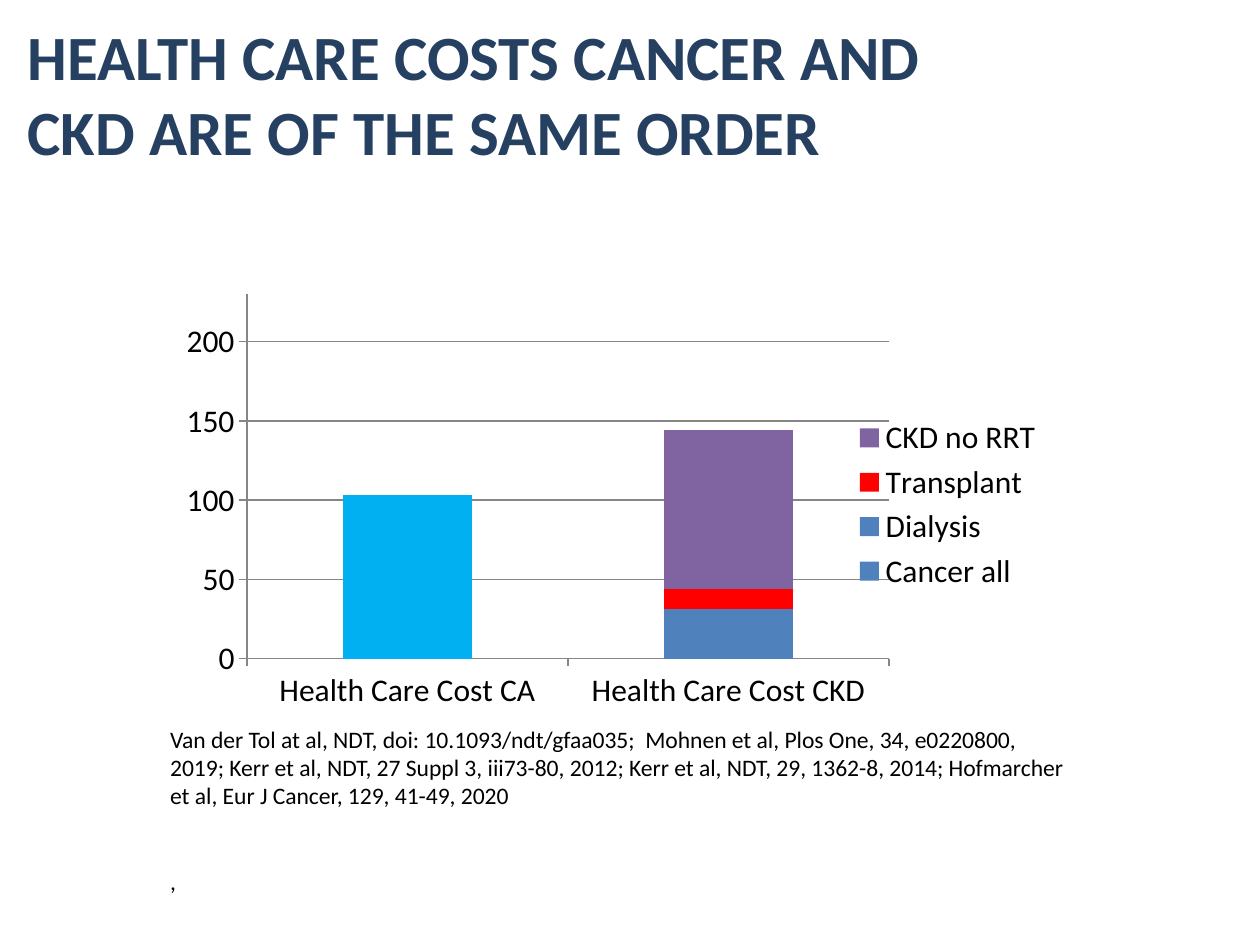
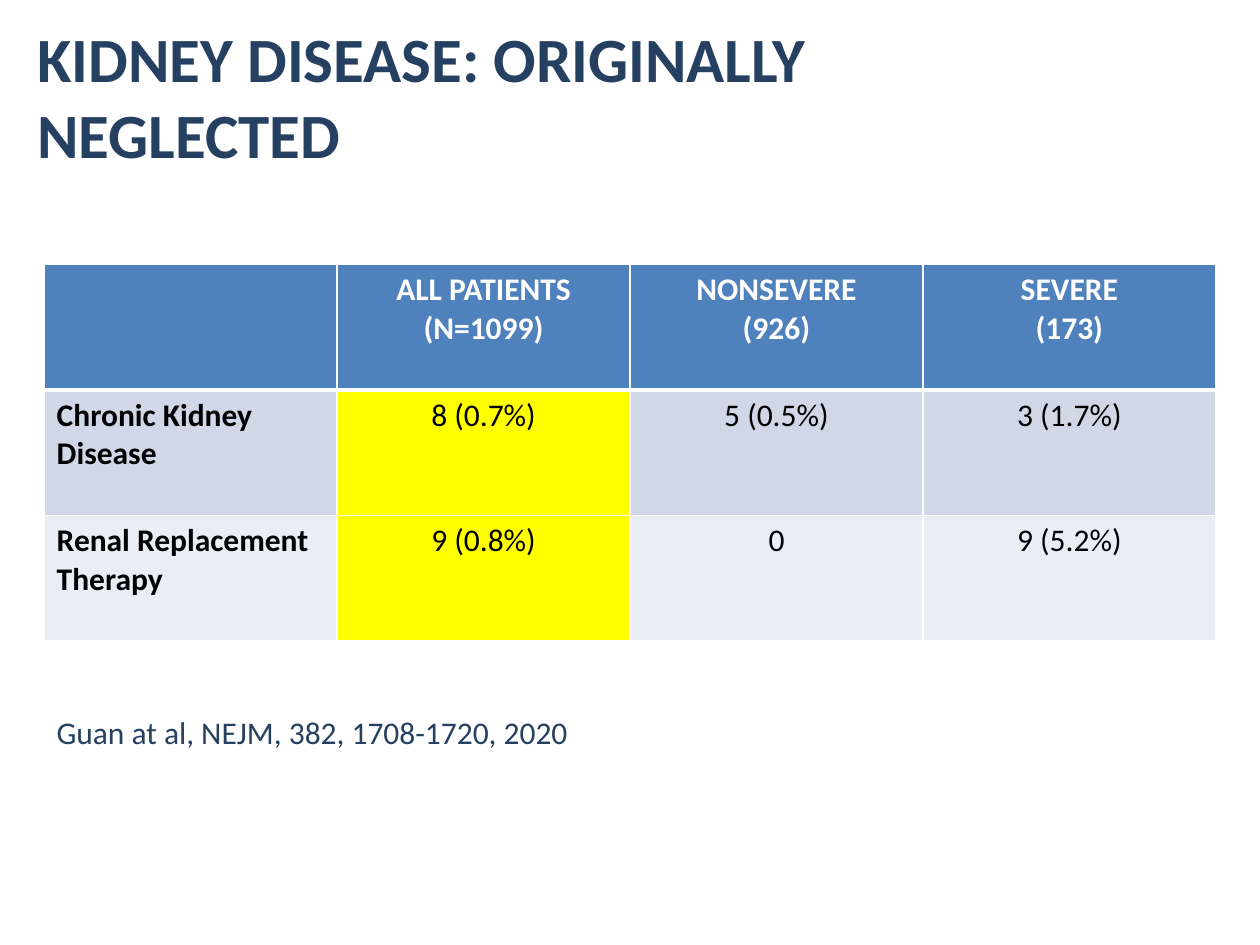
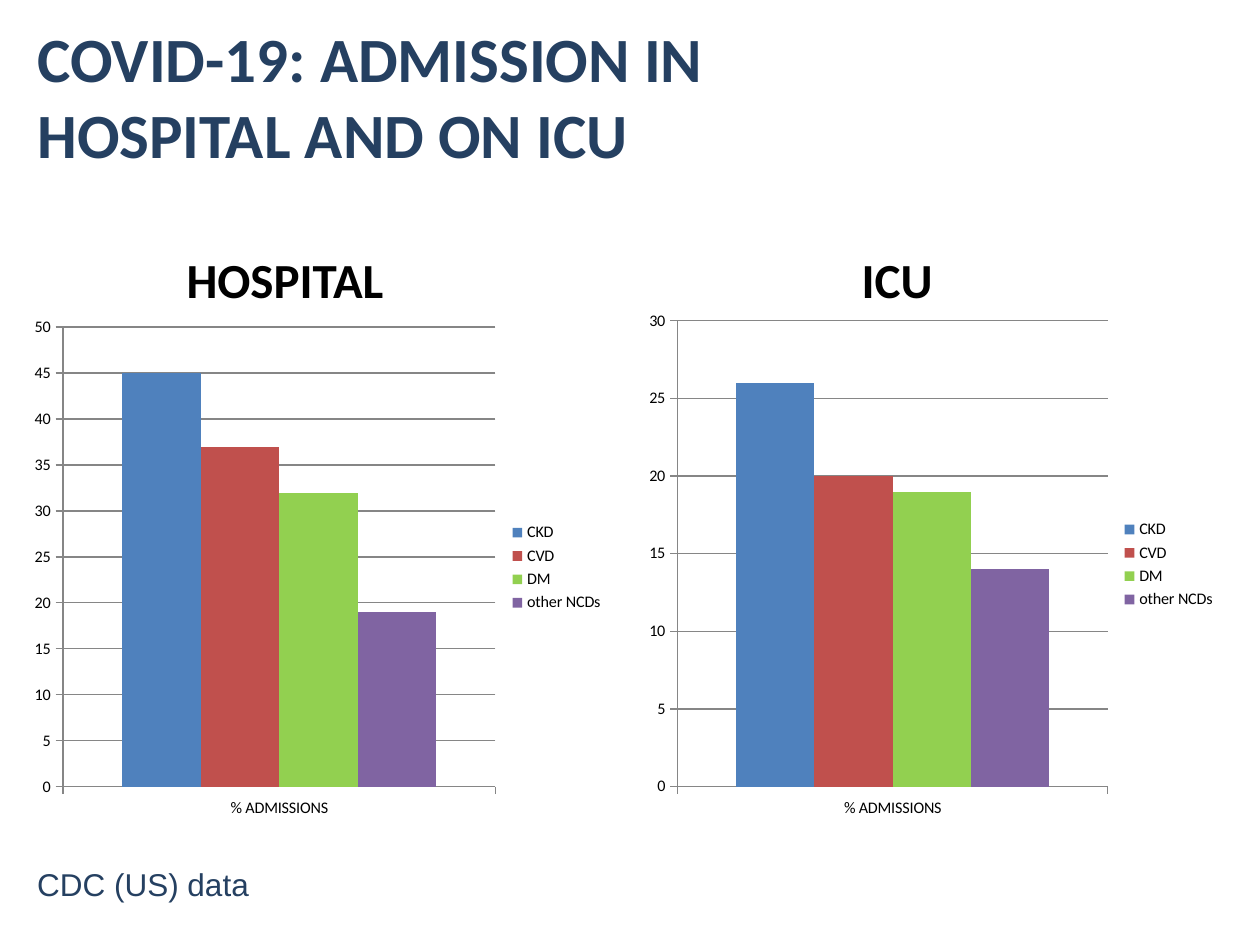
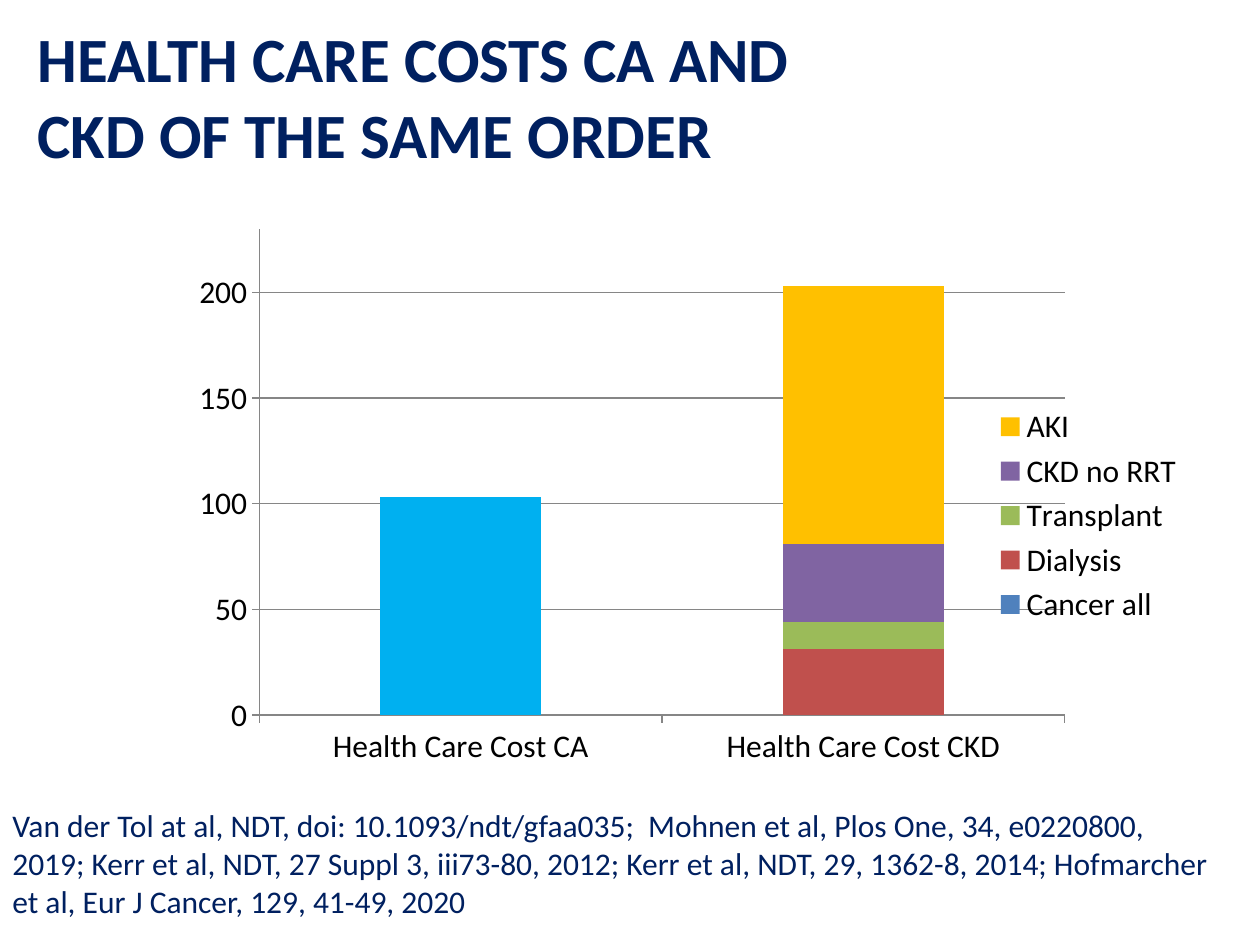
from pptx import Presentation
from pptx.chart.data import CategoryChartData
from pptx.dml.color import RGBColor
from pptx.enum.chart import XL_CHART_TYPE as ChartType
from pptx.enum.chart import XL_LEGEND_POSITION as LegendSide
from pptx.enum.chart import XL_TICK_MARK as Tick
from pptx.enum.text import MSO_ANCHOR as Anchor
from pptx.enum.text import PP_ALIGN as Align
from pptx.oxml import parse_xml
from pptx.oxml.ns import nsdecls
from pptx.util import Cm, Pt

# Shared colours and formats
NAVY, DEEP_BLUE, BLACK, WHITE = "254061", "002060", "000000", "FFFFFF"
BLUE, RED, PURPLE, GRID = "4F81BD", "C0504D", "8064A2", "868686"
SKY, YELLOW = "00B0F0", "FFFF00"
BANDS = ("D0D8E8", "E9EDF4")
TITLE_BOX = (0.5, 0.33, 18, 3.18)
TITLE_FONT = {"name": "Calibri", "size": Pt(36), "bold": True}
CAPTION_FONT = {"name": "Calibri", "size": Pt(28), "bold": True}
BODY_FONT = {"name": "Calibri", "size": Pt(18), "bold": False}
HEAD_FONT = {**BODY_FONT, "bold": True}
CHART_FONT = {"name": "Calibri", "size": Pt(9.2), "bold": False}

COST_SOURCES = (
    "Van der Tol at al, NDT, doi: 10.1093/ndt/gfaa035;  Mohnen et al, Plos One, "
    "34, e0220800, 2019; Kerr et al, NDT, 27 Suppl 3, iii73-80, 2012; Kerr et al, "
    "NDT, 29, 1362-8, 2014; Hofmarcher et al, Eur J Cancer, 129, 41-49, 2020"
)


def rgb(color):
    return RGBColor.from_string(color)


def lengths(box):
    return [Cm(value) for value in box]


def apply_format(target, values):
    for name, value in values.items():
        setattr(target, name, value)


def paint(fill, color):
    fill.solid()
    fill.fore_color.rgb = rgb(color)


def write(frame, lines, font, color, align=Align.LEFT, gap=0):
    """Write one paragraph per line, with a gap before all but the first."""
    for index, line in enumerate(lines):
        para = frame.add_paragraph() if index else frame.paragraphs[0]
        para.alignment = align
        if index and gap:
            para.space_before = Pt(gap)
        span = para.add_run()
        span.text = line
        apply_format(span.font, font)
        span.font.color.rgb = rgb(color)


def add_titled_page(deck, title, color=NAVY, box=TITLE_BOX):
    page = deck.slides.add_slide(deck.slide_layouts.get_by_name("Title Only"))
    holder = page.shapes.title
    apply_format(holder, dict(zip(("left", "top", "width", "height"), lengths(box))))
    apply_format(holder.text_frame, {"vertical_anchor": Anchor.MIDDLE, "word_wrap": True})
    write(holder.text_frame, [title], TITLE_FONT, color)
    return page


def add_text(page, box, lines, font, color, wrap=True, **layout):
    frame = page.shapes.add_textbox(*lengths(box)).text_frame
    frame.word_wrap = wrap
    write(frame, lines, font, color, **layout)


# Charts
def place_plot(chart, plot_box):
    """Fix the inner plot area, given as fractions of the chart."""
    area = chart.element.xpath(".//c:plotArea")[0]
    for layout in area.xpath("./c:layout"):
        area.remove(layout)
    parts = "".join(f'<c:{key} val="{value}"/>' for key, value in zip("xywh", plot_box))
    area.insert(0, parse_xml(
        f'<c:layout {nsdecls("c")}><c:manualLayout><c:layoutTarget val="inner"/>'
        f'<c:xMode val="edge"/><c:yMode val="edge"/>{parts}</c:manualLayout></c:layout>'
    ))


def add_columns(page, box, kind, categories, series, font):
    """Add a column chart; series holds (name, values, colour) rows."""
    data = CategoryChartData(number_format="General")
    data.categories = categories
    for name, values, _ in series:
        data.add_series(name, values)
    chart = page.shapes.add_chart(kind, *lengths(box), data).chart
    apply_format(chart, {"has_title": False, "has_legend": True})
    apply_format(chart.legend, {"position": LegendSide.RIGHT, "include_in_layout": False})
    apply_format(chart.font, font)
    chart.font.color.rgb = rgb(BLACK)

    plot = chart.plots[0]
    apply_format(plot, {"gap_width": 150, "vary_by_categories": False,
                        "overlap": 100 if kind == ChartType.COLUMN_STACKED else 0})
    for column, (_, _, color) in zip(plot.series, series):
        column.invert_if_negative = False
        paint(column.format.fill, color)

    chart.value_axis.has_major_gridlines = True
    for axis in (chart.category_axis, chart.value_axis):
        apply_format(axis, {"major_tick_mark": Tick.OUTSIDE, "minor_tick_mark": Tick.NONE})
    for part in (chart.category_axis, chart.value_axis, chart.value_axis.major_gridlines):
        part.format.line.width = Pt(0.75)
        part.format.line.color.rgb = rgb(GRID)
    return chart


def add_cost_chart(page, box, ckd_parts, plot_box):
    """Stack the CKD cost parts next to the single cancer column."""
    series = [("Cancer all", (103, None), BLUE)]
    series += [(name, (None, cost), color) for name, cost, color in ckd_parts]
    chart = add_columns(page, box, ChartType.COLUMN_STACKED,
                        ("Health Care Cost CA", "Health Care Cost CKD"), series, BODY_FONT)
    apply_format(chart.value_axis,
                 {"minimum_scale": 0, "maximum_scale": 230, "major_unit": 50})
    paint(chart.plots[0].series[0].points[0].format.fill, SKY)
    place_plot(chart, plot_box)


def add_admissions(page, box, caption_box, caption, rates):
    names = ("CKD", "CVD", "DM", "other NCDs")
    colors = (BLUE, RED, "92D050", PURPLE)
    series = [(name, (rate,), color) for name, rate, color in zip(names, rates, colors)]
    add_columns(page, box, ChartType.COLUMN_CLUSTERED, ("% ADMISSIONS",), series, CHART_FONT)
    add_text(page, caption_box, [caption], CAPTION_FONT, BLACK, align=Align.CENTER)


# Table
def set_borders(cell, top, bottom):
    properties = cell._tc.get_or_add_tcPr()
    for side, width in (("L", 1), ("R", 1), ("T", top), ("B", bottom)):
        properties.append(parse_xml(
            f'<a:ln{side} {nsdecls("a")} w="{Pt(width)}"><a:solidFill>'
            f'<a:srgbClr val="{WHITE}"/></a:solidFill></a:ln{side}>'
        ))


def add_patient_table(page, box, rows):
    table = page.shapes.add_table(len(rows), len(rows[0]), *lengths(box)).table
    for row, texts in enumerate(rows):
        for col, text in enumerate(texts):
            cell = table.cell(row, col)
            set_borders(cell, top=3 if row == 1 else 1, bottom=3 if row == 0 else 1)
            if row == 0:
                fill = BLUE
            else:
                fill = YELLOW if col == 1 else BANDS[row - 1]
            paint(cell.fill, fill)
            if text:
                write(cell.text_frame, text.split("\n"),
                      HEAD_FONT if row == 0 or col == 0 else BODY_FONT,
                      BLACK if row else WHITE,
                      Align.CENTER if col else Align.LEFT)


# Slides
def build_cancer_costs(deck):
    page = add_titled_page(deck, "HEALTH CARE COSTS CANCER AND CKD ARE OF THE SAME ORDER",
                           box=(0.3, 0.28, 18.67, 3.18))
    parts = [("Dialysis", 31, BLUE), ("Transplant", 13, "FF0000"), ("CKD no RRT", 100, PURPLE)]
    add_cost_chart(page, (3.56, 5.46, 17.73, 9.42), parts, (0.08, 0.05, 0.73, 0.78))
    add_text(page, (3.18, 14.48, 18.67, 4.29), [COST_SOURCES, ","],
             {**BODY_FONT, "size": Pt(13.5)}, BLACK, gap=33)


def build_neglected(deck):
    page = add_titled_page(deck, "KIDNEY DISEASE: ORIGINALLY NEGLECTED")
    add_patient_table(page, (0.89, 5.33, 23.62, 7.59), [
        ("", "ALL PATIENTS\n(N=1099)", "NONSEVERE\n(926)", "SEVERE\n(173)"),
        ("Chronic Kidney Disease", "8 (0.7%)", "5 (0.5%)", "3 (1.7%)"),
        ("Renal Replacement Therapy", "9 (0.8%)", "0", "9 (5.2%)"),
    ])
    add_text(page, (0.89, 14.25, 10.95, 1.02), ["Guan at al, NEJM, 382, 1708-1720, 2020"],
             BODY_FONT, NAVY, wrap=False)


def build_admissions(deck):
    page = add_titled_page(deck, "COVID-19: ADMISSION IN HOSPITAL AND ON ICU")
    add_admissions(page, (0.46, 6.2, 11.96, 10.49), (3.18, 4.9, 5.13, 1.45),
                   "HOSPITAL", (45, 37, 32, 19))
    add_admissions(page, (12.85, 6.07, 11.91, 10.62), (15.09, 4.9, 5.99, 1.45),
                   "ICU", (26, 20, 19, 14))
    add_text(page, (0.5, 17.32, 4.83, 1.02), ["CDC (US) data"],
             {**BODY_FONT, "name": "Arial"}, NAVY, wrap=False)


def build_costs_with_aki(deck):
    page = add_titled_page(deck, "HEALTH CARE COSTS CA AND CKD OF THE SAME ORDER", DEEP_BLUE)
    parts = [("Dialysis", 31, RED), ("Transplant", 13, "9BBB59"),
             ("CKD no RRT", 37, PURPLE), ("AKI", 122, "FFC000")]
    add_cost_chart(page, (1.9, 4.11, 22.23, 12.57), parts, (0.15, 0.04, 0.73, 0.78))
    add_text(page, (0, 16.13, 24.89, 2.9), [COST_SOURCES], BODY_FONT, DEEP_BLUE)


def main():
    deck = Presentation()
    apply_format(deck, {"slide_width": Cm(25.4), "slide_height": Cm(19.05)})
    for build in (build_cancer_costs, build_neglected, build_admissions, build_costs_with_aki):
        build(deck)
    deck.save("out.pptx")


if __name__ == "__main__":
    main()
